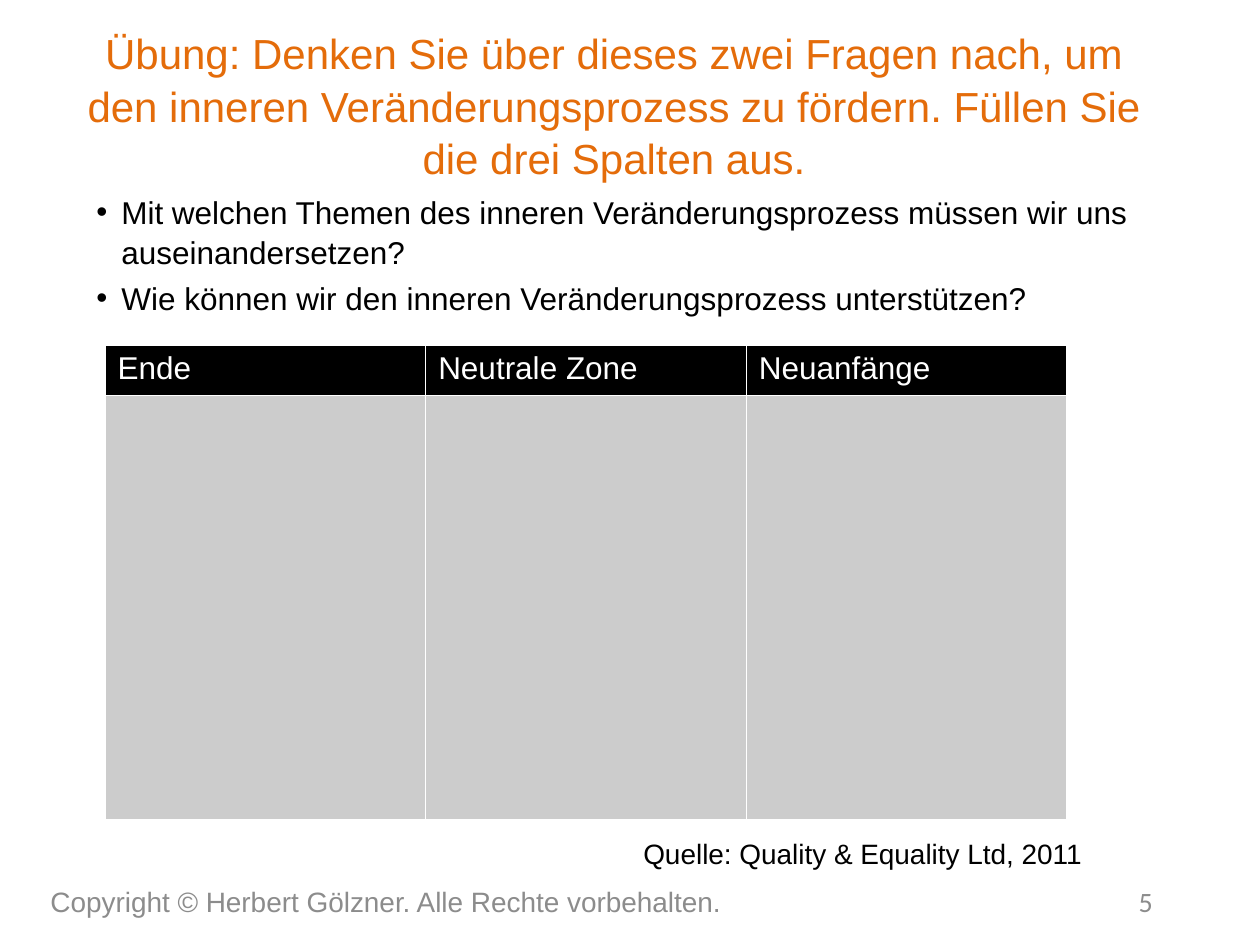
from lxml.etree import SubElement
from pptx import Presentation
from pptx.dml.color import RGBColor
from pptx.enum.text import MSO_ANCHOR, PP_ALIGN
from pptx.oxml import parse_xml
from pptx.oxml.ns import nsdecls, qn
from pptx.util import Pt

EMU_PER_PX = 914400 / 126
COLORS = {
    "heading": "E46C0A",
    "text": "000000",
    "muted": "8C8C8C",
    "header": "000000",
    "body": "CCCCCC",
    "grid": "FFFFFF",
}
FORMATS = {
    "heading": {"size": Pt(24), "name": "Arial"},
    "text": {"size": Pt(18), "name": "Arial"},
    "source": {"size": Pt(16), "name": "Arial"},
    "number": {"size": Pt(16), "name": "Calibri"},
}


def px(length):
    """Turn a length in px into EMU."""
    return round(length * EMU_PER_PX)


def write(paragraph, wording, style, color, **layout):
    """Write one formatted run into a paragraph."""
    run = paragraph.add_run()
    run.text = wording
    for attribute, value in FORMATS[style].items():
        setattr(run.font, attribute, value)
    run.font.color.rgb = RGBColor.from_string(COLORS[color])
    for attribute, value in layout.items():
        setattr(paragraph, attribute, value)


def add_frame(slide, box, anchor=MSO_ANCHOR.TOP):
    """Add a wrapping text frame in the given box."""
    frame = slide.shapes.add_textbox(*map(px, box)).text_frame
    for attribute, value in {"word_wrap": True, "vertical_anchor": anchor}.items():
        setattr(frame, attribute, value)
    return frame


def add_heading(slide, box, wording):
    """Add the centred task heading."""
    heading = add_frame(slide, box, MSO_ANCHOR.MIDDLE)
    write(heading.paragraphs[0], wording, "heading", "heading",
          alignment=PP_ALIGN.CENTER, line_spacing=1.05)


def add_questions(slide, box, questions):
    """Add the bulleted questions."""
    frame = add_frame(slide, box)
    for index, question in enumerate(questions):
        paragraph = frame.add_paragraph() if index else frame.paragraphs[0]
        properties = paragraph._p.get_or_add_pPr()
        properties.set("marL", str(px(25)))
        properties.set("indent", str(-px(25)))
        SubElement(properties, qn("a:buFont"), typeface="Arial")
        SubElement(properties, qn("a:buChar"), char="•")
        write(paragraph, question, "text", "text", line_spacing=1.05,
              space_before=Pt(3.6 if index else 0))


def style_cell(cell, fill):
    """Fill a cell and draw its grid lines."""
    cell.fill.solid()
    cell.fill.fore_color.rgb = RGBColor.from_string(COLORS[fill])
    for index, side in enumerate(("lnL", "lnR", "lnT", "lnB")):
        line = parse_xml(
            f'<a:{side} {nsdecls("a")} w="{Pt(1)}"><a:solidFill>'
            f'<a:srgbClr val="{COLORS["grid"]}"/></a:solidFill></a:{side}>')
        cell._tc.get_or_add_tcPr().insert(index, line)


def add_phases(slide, box, phases, header_height):
    """Add the table with one empty column for each phase."""
    left, top, width, height = box
    table = slide.shapes.add_table(2, len(phases), *map(px, box)).table
    table.rows[0].height = px(header_height)
    table.rows[1].height = px(height - header_height)
    for index, phase in enumerate(phases):
        table.columns[index].width = px(width / len(phases))
        header, answer = table.cell(0, index), table.cell(1, index)
        style_cell(header, "header")
        style_cell(answer, "body")
        write(header.text_frame.paragraphs[0], phase, "text", "grid")


def add_source(slide, box, wording):
    """Add the source of the exercise."""
    write(add_frame(slide, box).paragraphs[0], wording, "source", "text")


def add_footer(slide, box, copyright_line, number):
    """Add the copyright line and the slide number at the two ends."""
    left, top, width, height = box
    number_width = 294
    rights = add_frame(slide, (left, top, 801, height), MSO_ANCHOR.MIDDLE)
    write(rights.paragraphs[0], copyright_line, "source", "muted")
    number_box = (left + width - number_width, top, number_width, height)
    page = add_frame(slide, number_box, MSO_ANCHOR.MIDDLE)
    write(page.paragraphs[0], number, "number", "muted", alignment=PP_ALIGN.RIGHT)


def main():
    """Build and save the exercise slide."""
    deck = Presentation()
    deck.slide_width, deck.slide_height = px(1260), px(945)
    slide = deck.slides.add_slide(deck.slide_layouts[6])
    add_heading(slide, (63, 25, 1102, 158),
                "Übung: Denken Sie über dieses zwei Fragen nach, um den inneren "
                "Veränderungsprozess zu fördern. Füllen Sie die drei Spalten aus.")
    add_footer(slide, (38, 876, 1127, 50),
               "Copyright © Herbert Gölzner. Alle Rechte vorbehalten.", "5")
    add_questions(slide, (84, 185, 1124, 140), [
        "Mit welchen Themen des inneren Veränderungsprozess müssen wir uns "
        "auseinandersetzen?",
        "Wie können wir den inneren Veränderungsprozess unterstützen?",
    ])
    add_source(slide, (631, 830, 481, 47), "Quelle: Quality & Equality Ltd, 2011")
    add_phases(slide, (105, 345, 962, 473),
               ["Ende", "Neutrale Zone", "Neuanfänge"], 49)
    deck.save("out.pptx")


if __name__ == "__main__":
    main()
